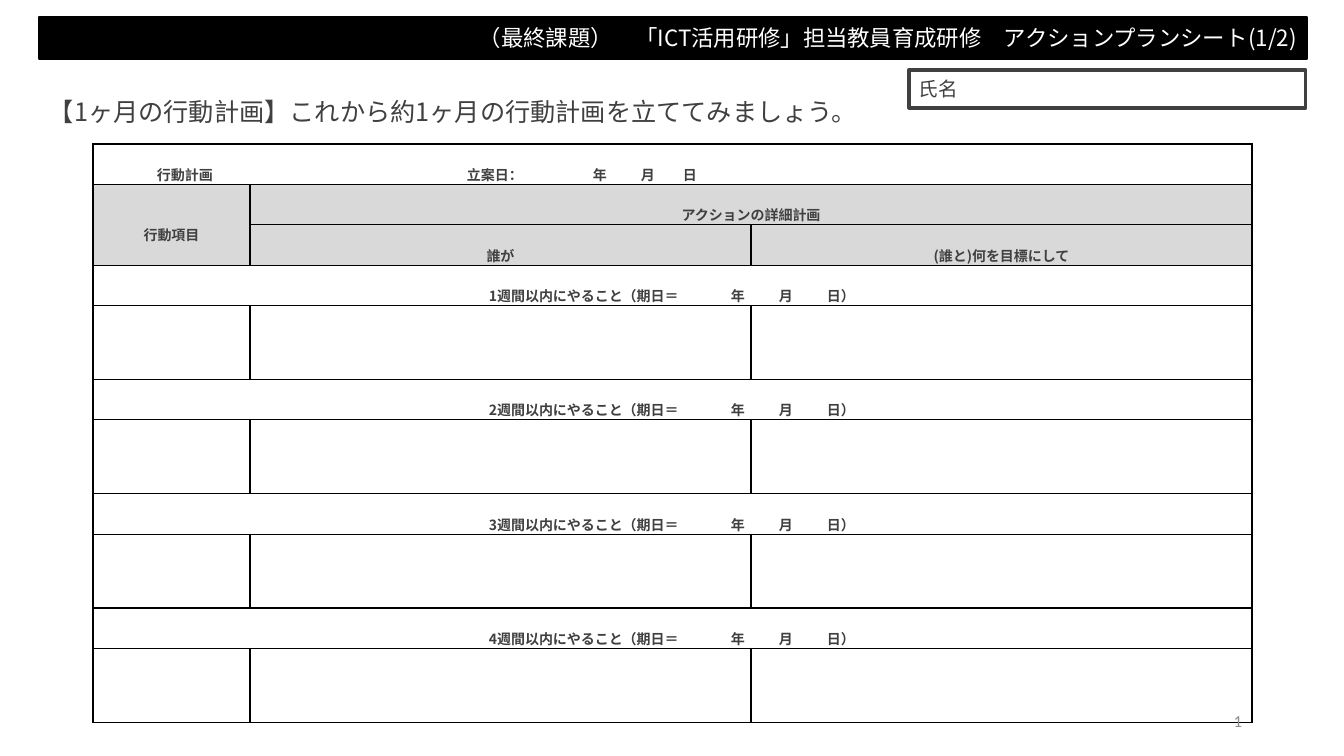
"""Builds a one-month action plan sheet with a weekly planning table."""
from lxml.etree import SubElement
from pptx import Presentation
from pptx.dml.color import RGBColor
from pptx.enum.shapes import MSO_SHAPE as Preset
from pptx.enum.text import MSO_ANCHOR as Anchor, MSO_AUTO_SIZE as AutoSize, PP_ALIGN as Align
from pptx.oxml.ns import qn
from pptx.util import Pt

TITLE = "（最終課題）　「ICT活用研修」担当教員育成研修　アクションプランシート(1/2)"
LEAD = "【1ヶ月の行動計画】これから約1ヶ月の行動計画を立ててみましょう。"
NAME_LABEL = "氏名"
PAGE_NUMBER = "1"
PLAN_LINE = ["行動計画", "立案日：", "年", "月", "日"]
PLAN_STOPS = [58, 368, 494, 542, 584]
WEEK_LINE = ["週間以内にやること（期日＝", "年", "月", "日）"]
WEEK_STOPS = [390, 632, 680, 728]
WEEKS = [1, 2, 3, 4]
HEADINGS = [
    (1, 0, 2, 0, "行動項目", 3),
    (1, 1, 1, 2, "アクションの詳細計画", 2),
    (2, 1, 2, 1, "誰が", 2),
    (2, 2, 2, 2, "(誰と)何を目標にして", 2),
]
HEADING_ROWS = 3
COLUMNS = [157, 501, 501]
LABEL_ROW, ENTRY_ROW = 36, 74
ROWS = [LABEL_ROW] * HEADING_ROWS + [LABEL_ROW, ENTRY_ROW] * len(WEEKS)

TITLE_BOX = (39, 17, 1268, 42)
LEAD_BOX = (39, 91, 932, 40)
NAME_BOX = (909, 70, 397, 38)
NUMBER_BOX = (950, 701, 302, 40)
TABLE_CORNER = (93, 144)

BLACK = RGBColor(0x00, 0x00, 0x00)
WHITE = RGBColor(0xFF, 0xFF, 0xFF)
INK = RGBColor(0x40, 0x40, 0x40)
SHADE = RGBColor(0xD9, 0xD9, 0xD9)
FAINT = RGBColor(0x8C, 0x8C, 0x8C)
JAPANESE, LATIN = "Noto Sans CJK JP", "Calibri"
EMU_PER_PX = 914400 / 100.8


def px(length):
    """Turns px into EMU."""
    return round(length * EMU_PER_PX)


def write(frame, text, size, color, align=Align.LEFT, font=JAPANESE, bold=False):
    """Writes one run into the first paragraph and returns the paragraph."""
    para = frame.paragraphs[0]
    para.alignment = align
    span = para.add_run()
    span.text = text
    span.font.size, span.font.bold, span.font.name = Pt(size), bold, font
    span.font.color.rgb = color
    SubElement(span.font._element, qn("a:ea"), typeface=font)
    return para


def paint(shape, fill, line, width):
    """Sets the fill and outline of a shape."""
    shape.fill.solid()
    shape.fill.fore_color.rgb = fill
    shape.line.color.rgb = line
    shape.line.width = Pt(width)


def add_label(page, area, anchor, *style):
    """Adds a text box with one line of text."""
    box = page.shapes.add_textbox(*map(px, area))
    box.text_frame.word_wrap = True
    box.text_frame.vertical_anchor = anchor
    write(box.text_frame, *style)


def fill_cell(cell, text, spacing=2, align=Align.CENTER):
    """Writes a bold table label with wide line spacing."""
    para = write(cell.text_frame, text, 10, INK, align, bold=True)
    para.line_spacing = spacing
    return para


def fill_tabbed(cell, parts, stops):
    """Writes parts of a line at the given tab stops."""
    para = fill_cell(cell, "".join("\t" + part for part in parts), align=Align.LEFT)
    tabs = SubElement(para._p.get_or_add_pPr(), qn("a:tabLst"))
    for stop in stops:
        SubElement(tabs, qn("a:tab"), pos=str(px(stop)), algn="l")


def style_cell(cell, fill):
    """Gives a cell its margins, borders and fill."""
    cell.margin_left = cell.margin_right = px(6)
    cell.margin_top = cell.margin_bottom = 0
    properties = cell._tc.get_or_add_tcPr()
    for side in ("lnL", "lnR", "lnT", "lnB"):
        border = SubElement(properties, qn("a:" + side), w=str(Pt(1)))
        solid = SubElement(border, qn("a:solidFill"))
        SubElement(solid, qn("a:srgbClr"), val=str(BLACK))
    cell.fill.solid()
    cell.fill.fore_color.rgb = fill


def add_plan(page):
    """Adds the action plan table."""
    size = (sum(COLUMNS), sum(ROWS))
    frame = page.shapes.add_table(len(ROWS), len(COLUMNS), *map(px, TABLE_CORNER + size))
    table = frame.table
    table.first_row = table.horz_banding = False
    for column, width in zip(table.columns, COLUMNS):
        column.width = px(width)
    for index, height in enumerate(ROWS):
        table.rows[index].height = px(height)
        for cell in table.rows[index].cells:
            style_cell(cell, SHADE if 0 < index < HEADING_ROWS else WHITE)

    last = len(COLUMNS) - 1
    table.cell(0, 0).merge(table.cell(0, last))
    fill_tabbed(table.cell(0, 0), PLAN_LINE, PLAN_STOPS)
    for top, left, bottom, right, text, spacing in HEADINGS:
        if (top, left) != (bottom, right):
            table.cell(top, left).merge(table.cell(bottom, right))
        fill_cell(table.cell(top, left), text, spacing)
    for index, week in enumerate(WEEKS):
        row = HEADING_ROWS + 2 * index
        table.cell(row, 0).merge(table.cell(row, last))
        fill_tabbed(table.cell(row, 0), [f"{week}{WEEK_LINE[0]}"] + WEEK_LINE[1:], WEEK_STOPS)


def main():
    """Builds and saves the deck."""
    deck = Presentation()
    deck.slide_width, deck.slide_height = px(1344), px(756)
    page = deck.slides.add_slide(deck.slide_layouts[5])

    title = page.shapes.title
    title.left, title.top, title.width, title.height = map(px, TITLE_BOX)
    paint(title, BLACK, BLACK, 1)
    title.text_frame.auto_size = AutoSize.NONE
    title.text_frame.vertical_anchor = Anchor.MIDDLE
    write(title.text_frame, TITLE, 16, WHITE, Align.RIGHT)

    add_plan(page)
    add_label(page, LEAD_BOX, Anchor.TOP, LEAD, 18, INK)
    add_label(page, NUMBER_BOX, Anchor.MIDDLE, PAGE_NUMBER, 12, FAINT, Align.RIGHT, LATIN)

    name_box = page.shapes.add_shape(Preset.RECTANGLE, *map(px, NAME_BOX))
    name_box.shadow.inherit = False
    paint(name_box, WHITE, INK, 2.25)
    name_box.text_frame.vertical_anchor = Anchor.MIDDLE
    write(name_box.text_frame, NAME_LABEL, 14, INK)
    deck.save("out.pptx")


if __name__ == "__main__":
    main()
